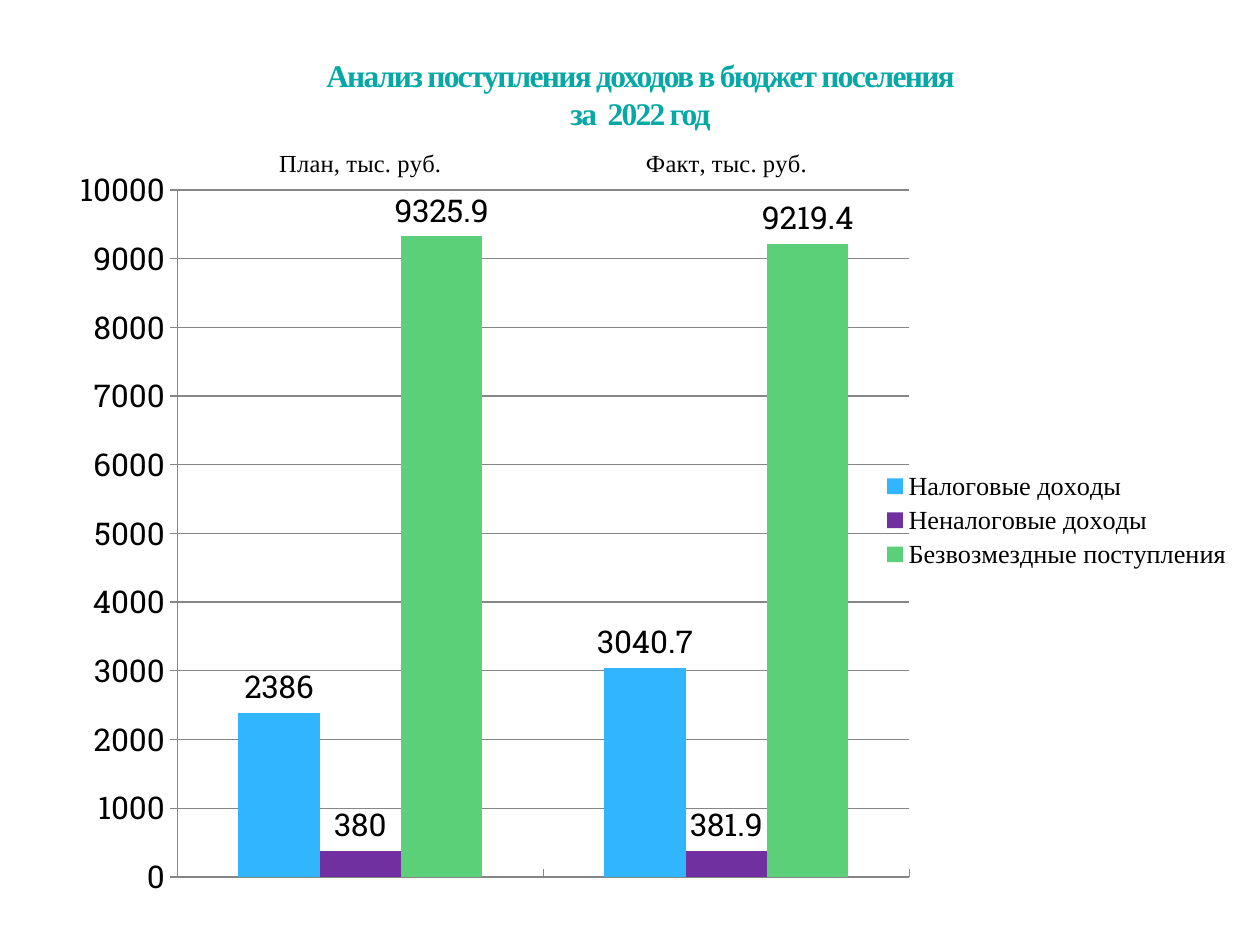
from lxml.etree import SubElement as Sub
from pptx import Presentation
from pptx.chart.data import CategoryChartData as Data
from pptx.dml.color import RGBColor
from pptx.enum.chart import XL_CHART_TYPE as Kind, XL_LABEL_POSITION as Spot
from pptx.enum.chart import XL_LEGEND_POSITION as Side, XL_TICK_LABEL_POSITION as Level
from pptx.enum.chart import XL_TICK_MARK as Tick
from pptx.enum.text import MSO_ANCHOR as Anchor, PP_ALIGN as Align
from pptx.oxml.ns import qn
from pptx.util import Pt

# Content
TITLE = ["Анализ поступления доходов в бюджет поселения", "за  2022 год"]
CATS = ["План, тыс. руб.", "Факт, тыс. руб."]
ROWS = [
    ("Налоговые доходы", "31B6FD", (2386, 3040.7)),
    ("Неналоговые доходы", "7030A0", (380, 381.9)),
    ("Безвозмездные поступления", "5BD078", (9325.9, 9219.4)),
]
PLOT = {"x": 0.096, "y": 0.06, "w": 0.62, "h": 0.915}
SERIF, SLAB = "Times New Roman", "Roboto Slab"
GRAY = "868686"
PX = 914400 // 126


def px(*nums):
    return [n * PX for n in nums]


def color(code):
    return RGBColor.from_string(code)


def style(font, size, face, code="000000", bold=False):
    font.size, font.name, font.bold = Pt(size), face, bold
    font.color.rgb = color(code)


def write(slide, box, lines, size, face, code, bold=False, space=0):
    frame = slide.shapes.add_textbox(*px(*box)).text_frame
    frame.word_wrap = True
    frame.vertical_anchor = Anchor.TOP
    frame.margin_top = frame.margin_bottom = 0
    for i, line in enumerate(lines):
        para = frame.paragraphs[0] if i == 0 else frame.add_paragraph()
        para.alignment = Align.CENTER
        run = para.add_run()
        run.text = line
        style(run.font, size, face, code, bold)
        run.font._element.set("spc", str(space * 100))


def rule(line):
    line.color.rgb = color(GRAY)
    line.width = Pt(0.75)


def place(chart):
    area = chart._chartSpace.chart.plotArea
    for old in area.findall(qn("c:layout")):
        area.remove(old)
    layout = Sub(area, qn("c:layout"))
    area.insert(0, layout)
    box = Sub(layout, qn("c:manualLayout"))
    marks = [("layoutTarget", "inner"), ("xMode", "edge"), ("yMode", "edge")]
    for tag, val in marks + list(PLOT.items()):
        Sub(box, qn("c:" + tag)).set("val", str(val))


deck = Presentation()
deck.slide_width, deck.slide_height = px(1260, 945)
slide = deck.slides.add_slide(deck.slide_layouts[6])

# Chart
data = Data()
data.categories = CATS
for name, _, vals in ROWS:
    data.add_series(name, vals)
chart = slide.shapes.add_chart(
    Kind.COLUMN_CLUSTERED, *px(64, 145, 1181, 753), data).chart
chart.has_title = False
style(chart.font, 18, SLAB)
place(chart)

# Columns and their values
plot = chart.plots[0]
plot.gap_width, plot.overlap = 150, 0
plot.vary_by_categories = False
for series, (_, code, _) in zip(plot.series, ROWS):
    series.format.fill.solid()
    series.format.fill.fore_color.rgb = color(code)
    labels = series.data_labels
    labels.show_value = True
    labels.position = Spot.OUTSIDE_END
    style(labels.font, 18, SLAB)

# Axes
cat, val = chart.category_axis, chart.value_axis
cat.major_tick_mark, val.major_tick_mark = Tick.INSIDE, Tick.OUTSIDE
cat.tick_label_position = Level.HIGH
val.minimum_scale, val.maximum_scale, val.major_unit = 0, 10000, 1000
style(cat.tick_labels.font, 14, SERIF)
style(val.tick_labels.font, 18, SLAB)
for line in (cat.format.line, val.format.line, val.major_gridlines.format.line):
    rule(line)

# Legend
chart.has_legend = True
chart.legend.position = Side.RIGHT
chart.legend.include_in_layout = False
style(chart.legend.font, 15, SERIF)

# Title
write(slide, (144, 56, 993, 110), TITLE, size=18, face=SERIF,
      code="04A8A4", bold=True, space=-1)

deck.save("out.pptx")
